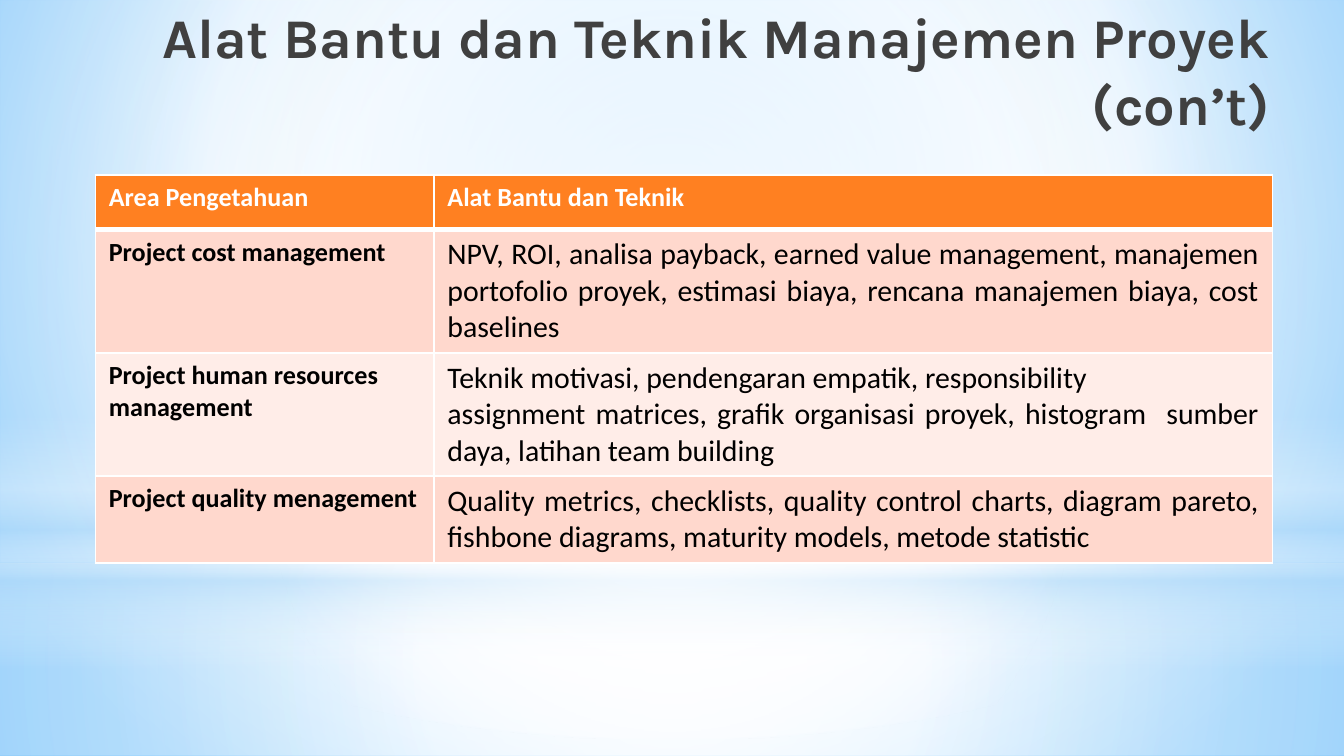
from typing import NamedTuple

from lxml import etree
from pptx import Presentation
from pptx import util as u
from pptx.dml import color
from pptx.enum import shapes, text
from pptx.oxml import ns

WIDTH = u.Inches(10)
HEIGHT = WIDTH * 9 // 16
COLORS = {
    "white": "FFFFFF", "black": "000000", "title": "404040",
    "sky": "9ED5FF", "blue": "5BB9FF", "mist": "B4DCFA",
    "header": "FF8021", "odd": "FFD8CD", "even": "FFEDE8",
}
CENTER = (50, 50, 50, 50)


class Stop(NamedTuple):
    position: int
    color: str
    opacity: int = 100


class Band(NamedTuple):
    """A backdrop shape; top and height are percentages of the slide height."""
    kind: shapes.MSO_SHAPE
    top: float
    height: float
    stops: list[Stop]
    focus: tuple | None = CENTER


class Area(NamedTuple):
    name: str
    tools: list[str]
    height: float


SKY = [Stop(0, "sky"), Stop(60, "white"), Stop(100, "blue")]
RECT, OVAL = shapes.MSO_SHAPE.RECTANGLE, shapes.MSO_SHAPE.OVAL
BANDS = [
    Band(RECT, 74.5, 25.5,
         [Stop(0, "white", 91), Stop(37, "white", 76), Stop(100, "mist", 79)]),
    Band(RECT, 0, 74.5,
         [Stop(0, "white", 89), Stop(48, "white", 62), Stop(100, "mist", 79)]),
    Band(RECT, 55, 33.4,
         [Stop(0, "white", 0), Stop(29, "white", 30), Stop(45, "mist", 40),
          Stop(55, "white", 26), Stop(65, "mist", 60), Stop(100, "white", 0)], None),
    Band(OVAL, 23.3, 74.5, [Stop(0, "white"), Stop(56, "white", 0)]),
]
COLUMNS = (2.52, 6.24)
AREAS = [
    Area("Area Pengetahuan", ["Alat Bantu dan Teknik"], 0.41),
    Area("Project cost management",
         ["NPV, ROI, analisa payback, earned value management, manajemen portofolio "
          "proyek, estimasi biaya, rencana manajemen biaya, cost baselines"], 0.91),
    Area("Project human resources management",
         ["Teknik motivasi, pendengaran empatik, responsibility ",
          "assignment matrices, grafik organisasi proyek, histogram  sumber daya, "
          "latihan team building"], 0.91),
    Area("Project quality menagement",
         ["Quality metrics, checklists, quality control charts, diagram pareto, "
          "fishbone diagrams, maturity models, metode statistic"], 0.65),
]


def rgb(name: str) -> color.RGBColor:
    return color.RGBColor.from_string(COLORS[name])


def add_node(parent, tag: str, **attributes):
    return etree.SubElement(parent, ns.qn(f"a:{tag}"),
                            {key: str(value) for key, value in attributes.items()})


def set_gradient(fill, owner, stops: list[Stop], focus: tuple | None) -> None:
    """Give the fill of owner a circular gradient, or a vertical one without focus."""
    fill.gradient()
    gradient = owner.find(".//" + ns.qn("a:gradFill"))
    for child in list(gradient):
        gradient.remove(child)
    stop_list = add_node(gradient, "gsLst")
    for stop in stops:
        node = add_node(stop_list, "gs", pos=stop.position * 1000)
        tint = add_node(node, "srgbClr", val=COLORS[stop.color])
        if stop.opacity < 100:
            add_node(tint, "alpha", val=stop.opacity * 1000)
    if focus:
        circle = add_node(gradient, "path", path="circle")
        add_node(circle, "fillToRect",
                 **{side: share * 1000 for side, share in zip("ltrb", focus)})
    else:
        add_node(gradient, "lin", ang=90 * 60000, scaled=0)


def draw_band(page, band: Band) -> None:
    box = page.shapes.add_shape(band.kind, 0, int(band.top / 100 * HEIGHT),
                                WIDTH, int(band.height / 100 * HEIGHT))
    box.shadow.inherit = False
    box.line.fill.background()
    set_gradient(box.fill, box.element, band.stops, band.focus)


def add_span(para, words: str, font: str, size: int, tint: str, bold: bool) -> None:
    span = para.add_run()
    span.text = words
    span.font.name, span.font.size, span.font.bold = font, u.Pt(size), bold
    span.font.color.rgb = rgb(tint)


def draw_title(page, words: str) -> None:
    box = page.shapes.title
    page.shapes.element.append(box.element)  # in front of the backdrop
    box.left, box.top, box.width, box.height = map(u.Inches, (0.7, 0.49, 8.85, 0.63))
    frame = box.text_frame
    frame.word_wrap = True
    frame.auto_size = text.MSO_AUTO_SIZE.NONE
    frame.vertical_anchor = text.MSO_ANCHOR.BOTTOM
    frame.margin_left = frame.margin_right = u.Inches(0.1)
    frame.margin_top = frame.margin_bottom = u.Inches(0.1)
    para = frame.paragraphs[0]
    para.alignment = text.PP_ALIGN.RIGHT
    add_span(para, words, "Karla", 30, "title", True)


def fill_cell(cell, paragraphs: list[str], row: int, column: int) -> None:
    header, body = row == 0, row > 0 and column > 0
    properties = cell._tc.get_or_add_tcPr()
    for side in "LRTB":
        thick = (header and side == "B") or (row == 1 and side == "T")
        line = add_node(properties, f"ln{side}", w=u.Pt(3 if thick else 1))
        add_node(add_node(line, "solidFill"), "srgbClr", val=COLORS["white"])
    cell.fill.solid()
    cell.fill.fore_color.rgb = rgb("header" if header else "odd" if row % 2 else "even")
    frame = cell.text_frame
    for index, words in enumerate(paragraphs):
        para = frame.add_paragraph() if index else frame.paragraphs[0]
        para.alignment = text.PP_ALIGN.JUSTIFY if body else text.PP_ALIGN.LEFT
        add_span(para, words, "Calibri", 16 if body else 14,
                 "white" if header else "black", not body)


def draw_table(page, areas: list[Area]) -> None:
    size = (sum(COLUMNS), sum(area.height for area in areas))
    table = page.shapes.add_table(len(areas), len(COLUMNS),
                                  *map(u.Inches, (0.71, 1.3, *size))).table
    table.horz_banding = False
    for column, width in zip(table.columns, COLUMNS):
        column.width = u.Inches(width)
    for row, area in enumerate(areas):
        table.rows[row].height = u.Inches(area.height)
        for column, paragraphs in enumerate(([area.name], area.tools)):
            fill_cell(table.cell(row, column), paragraphs, row, column)


def main() -> None:
    deck = Presentation()
    deck.slide_width, deck.slide_height = WIDTH, HEIGHT
    page = deck.slides.add_slide(deck.slide_layouts[5])
    # Backdrop
    set_gradient(page.background.fill, page.element, SKY, (20, 10, 20, 60))
    for band in BANDS:
        draw_band(page, band)
    # Content
    draw_title(page, "Alat Bantu dan Teknik Manajemen Proyek (con’t)")
    draw_table(page, AREAS)
    deck.save("out.pptx")


if __name__ == "__main__":
    main()
